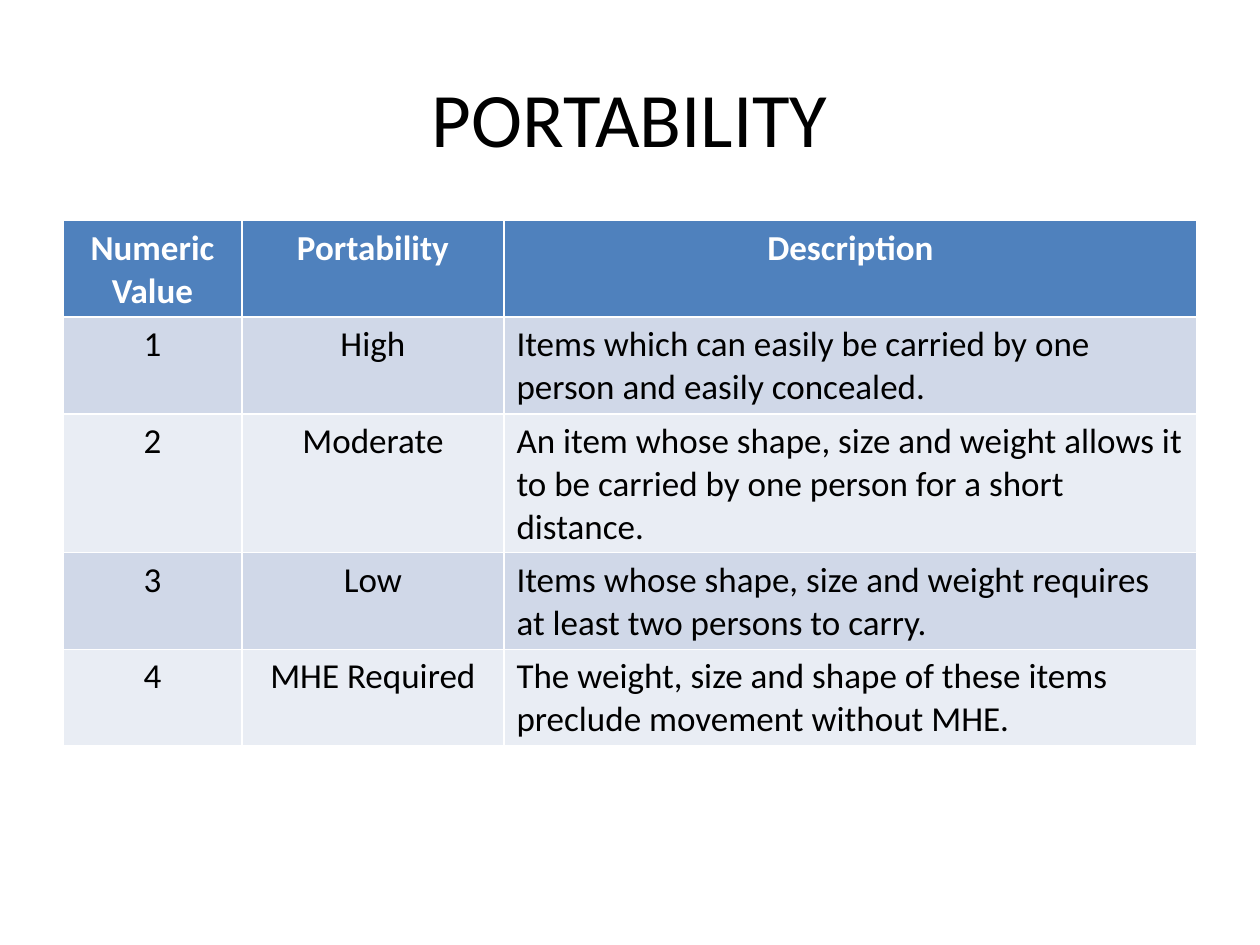
import pptx
import pptx.util
import pptx.dml.color
import pptx.enum.text

Inches = pptx.util.Inches
ALIGN = pptx.enum.text.PP_ALIGN
ANCHOR = pptx.enum.text.MSO_ANCHOR


def color(hex_value):
    return pptx.dml.color.RGBColor.from_string(hex_value)


def style_paragraph(paragraph, size, hex_value, align, bold=False):
    paragraph.alignment = align
    paragraph.font.name = "Calibri"
    paragraph.font.size = pptx.util.Pt(size)
    paragraph.font.bold = bold
    paragraph.font.color.rgb = color(hex_value)


deck = pptx.Presentation()
deck.slide_width = Inches(10)
deck.slide_height = Inches(7.5)
page = deck.slides.add_slide(deck.slide_layouts[6])

# Title
title_box = page.shapes.add_textbox(Inches(0.5), Inches(0.3), Inches(9), Inches(1.25))
title_frame = title_box.text_frame
title_frame.word_wrap = True
title_frame.vertical_anchor = ANCHOR.MIDDLE
title_frame.text = "PORTABILITY"
style_paragraph(title_frame.paragraphs[0], 44, "000000", ALIGN.CENTER)

# Portability table; the default table style draws the white cell borders
rows = [
    ("Numeric Value", "Portability", "Description"),
    ("1", "High", "Items which can easily be carried by one person and easily concealed."),
    ("2", "Moderate", "An item whose shape, size and weight allows it to be carried "
                      "by one person for a short distance."),
    ("3", "Low", "Items whose shape, size and weight requires at least two persons to carry."),
    ("4", "MHE Required", "The weight, size and shape of these items preclude "
                          "movement without MHE."),
]
column_widths = [1.42, 2.08, 5.5]
row_height = 0.41

table = page.shapes.add_table(
    len(rows), len(column_widths), Inches(0.5), Inches(1.75),
    Inches(sum(column_widths)), Inches(row_height * len(rows))).table
for column, width in zip(table.columns, column_widths):
    column.width = Inches(width)

for row_index, row in enumerate(rows):
    table.rows[row_index].height = Inches(row_height)
    is_header = row_index == 0
    if is_header:
        fill_color = "4F81BD"
    else:
        fill_color = "D0D8E8" if row_index % 2 else "E9EDF4"
    for column_index, text in enumerate(row):
        cell = table.cell(row_index, column_index)
        cell.text = text
        cell.fill.solid()
        cell.fill.fore_color.rgb = color(fill_color)
        centered = is_header or column_index < 2
        style_paragraph(cell.text_frame.paragraphs[0], 20,
                        "FFFFFF" if is_header else "000000",
                        ALIGN.CENTER if centered else ALIGN.LEFT, bold=is_header)

deck.save("out.pptx")
